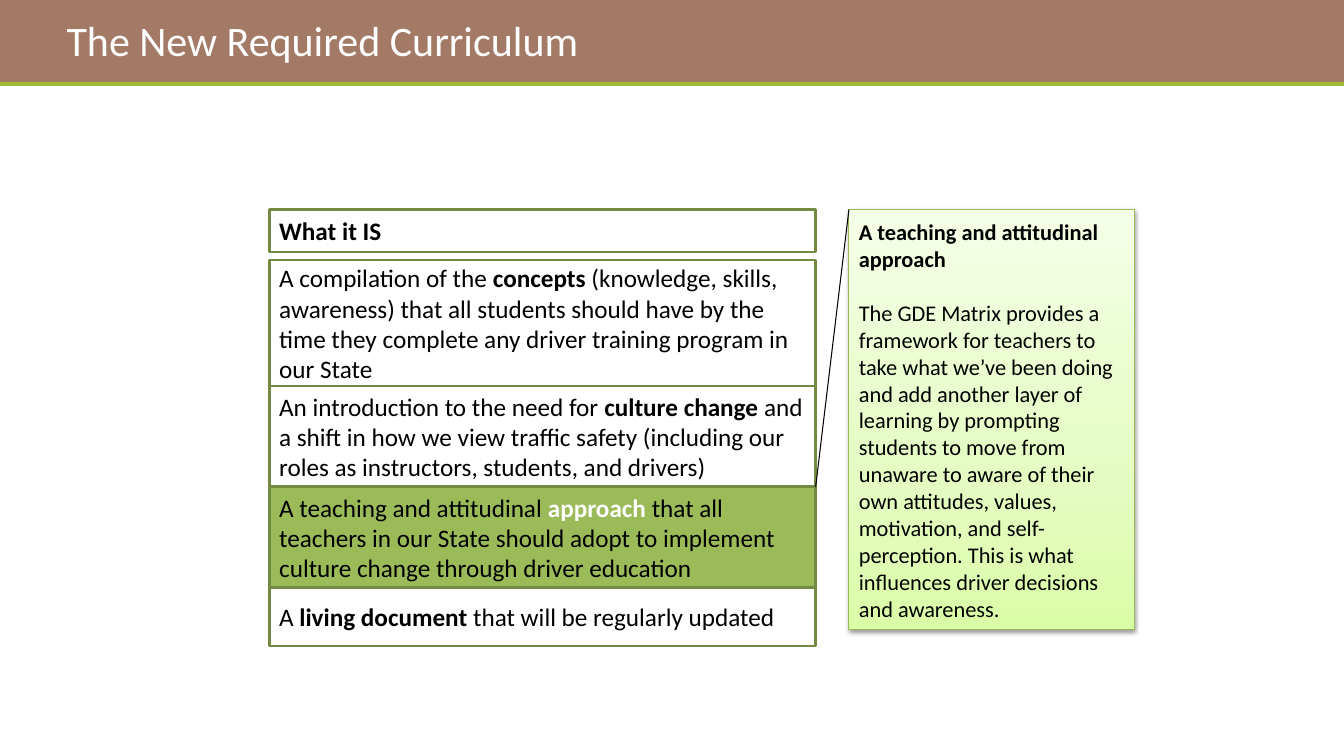
from lxml.etree import SubElement
from pptx import Presentation
from pptx.dml.color import RGBColor
from pptx.enum.shapes import MSO_CONNECTOR, MSO_SHAPE
from pptx.enum.text import MSO_ANCHOR, PP_ALIGN
from pptx.oxml.ns import qn
from pptx.util import Inches, Pt

BLACK = RGBColor(0x00, 0x00, 0x00)
WHITE = RGBColor(0xFF, 0xFF, 0xFF)
BROWN = RGBColor(0xA3, 0x7A, 0x66)
LIME = RGBColor(0xA0, 0xBA, 0x35)
OLIVE = RGBColor(0x73, 0x8A, 0x42)
GREEN = RGBColor(0x9B, 0xBB, 0x59)
CALLOUT_EDGE = RGBColor(0x98, 0xB9, 0x55)
CALLOUT_STOPS = [
    (0, RGBColor(0xDA, 0xFD, 0xA7)),
    (35, RGBColor(0xE4, 0xFC, 0xC2)),
    (100, RGBColor(0xF5, 0xFF, 0xE7)),
]


class SlideBuilder:
    font = "Calibri"

    def __init__(self, slide):
        self.slide = slide

    def add_runs(self, paragraph, runs, size):
        paragraph.alignment = PP_ALIGN.LEFT
        for text, bold, color in runs:
            run = paragraph.add_run()
            run.text = text
            run.font.name = self.font
            run.font.size = Pt(size)
            run.font.bold = bold
            run.font.color.rgb = color

    def title(self, text, left, top, width, height):
        title = self.slide.shapes.title
        title.left, title.top = Inches(left), Inches(top)
        title.width, title.height = Inches(width), Inches(height)
        title.text_frame.vertical_anchor = MSO_ANCHOR.MIDDLE
        self.add_runs(title.text_frame.paragraphs[0], [(text, False, WHITE)], 30)
        self.slide.shapes._spTree.append(title._element)

    def box(self, left, top, width, height, fill=None, edge=None, weight=2):
        box = self.slide.shapes.add_shape(
            MSO_SHAPE.RECTANGLE, Inches(left), Inches(top), Inches(width), Inches(height))
        box.shadow.inherit = False
        if fill is None:
            box.fill.background()
        else:
            box.fill.solid()
            box.fill.fore_color.rgb = fill
        if edge is None:
            box.line.fill.background()
        else:
            box.line.color.rgb = edge
            box.line.width = Pt(weight)
        return box

    def text(self, box, paragraphs, size, gap=0):
        frame = box.text_frame
        frame.word_wrap = True
        frame.vertical_anchor = MSO_ANCHOR.MIDDLE
        for index, runs in enumerate(paragraphs):
            paragraph = frame.add_paragraph() if index else frame.paragraphs[0]
            if index:
                paragraph.space_before = Pt(gap)
            self.add_runs(paragraph, runs, size)

    def gradient(self, box, stops, angle):
        box.fill.gradient()
        box.fill.gradient_angle = angle
        stop_list = box._element.spPr.find(qn("a:gradFill")).find(qn("a:gsLst"))
        for stop in list(stop_list):
            stop_list.remove(stop)
        for position, color in stops:
            stop = SubElement(stop_list, qn("a:gs"), pos=str(position * 1000))
            SubElement(stop, qn("a:srgbClr"), val=str(color))

    def drop_shadow(self, box):
        effects = box._element.spPr.find(qn("a:effectLst"))
        shadow = SubElement(effects, qn("a:outerShdw"), blurRad=str(Pt(3.1)),
                            dist=str(Pt(1.6)), dir="5400000", rotWithShape="0")
        color = SubElement(shadow, qn("a:srgbClr"), val=str(BLACK))
        SubElement(color, qn("a:alpha"), val="38000")

    def line(self, start, end, color, weight):
        line = self.slide.shapes.add_connector(
            MSO_CONNECTOR.STRAIGHT, *(Inches(value) for value in (*start, *end)))
        line.line.color.rgb = color
        line.line.width = Pt(weight)
        SubElement(line._element.spPr, qn("a:effectLst"))


def main():
    deck = Presentation()
    deck.slide_width, deck.slide_height = Inches(13.33), Inches(7.5)
    builder = SlideBuilder(deck.slides.add_slide(deck.slide_layouts[5]))

    builder.box(0, 0, 13.33, 0.83, BROWN)
    builder.line((0, 0.83), (13.33, 0.83), LIME, 3)
    builder.title("The New Required Curriculum", 0.56, 0.17, 9.11, 0.45)

    list_left, list_width, list_top = 2.67, 5.42, 2.08
    heading = builder.box(list_left, list_top, list_width, 0.42, edge=OLIVE)
    builder.text(heading, [[("What it IS", True, BLACK)]], 18)

    statements = [
        (1.25, None, BLACK, "A compilation of the ", "concepts ",
         "(knowledge, skills, awareness) that all students should have by the time "
         "they complete any driver training program in our State"),
        (1, None, BLACK, "An introduction to the need for ", "culture change ",
         "and a shift in how we view traffic safety (including our roles as "
         "instructors, students, and drivers)"),
        (1, GREEN, WHITE, "A teaching and attitudinal ", "approach ",
         "that all teachers in our State should adopt to implement culture change "
         "through driver education"),
        (0.58, None, BLACK, "A ", "living document ", "that will be regularly updated"),
    ]
    top = 2.58
    for height, fill, key_color, opening, key, ending in statements:
        statement = builder.box(list_left, top, list_width, height, fill, OLIVE)
        builder.text(statement, [[(opening, False, BLACK), (key, True, key_color),
                                  (ending, False, BLACK)]], 18)
        top += height

    callout_left = 8.42
    callout = builder.box(callout_left, list_top, 2.83, 4.17, edge=CALLOUT_EDGE, weight=0.75)
    builder.gradient(callout, CALLOUT_STOPS, 90)
    builder.drop_shadow(callout)
    builder.text(callout, [
        [("A teaching and attitudinal approach", True, BLACK)],
        [("The GDE Matrix provides a framework for teachers to take what we’ve been "
          "doing and add another layer of learning by prompting students to move from "
          "unaware to aware of their own attitudes, values, motivation, and "
          "self-perception. This is what influences driver decisions and awareness.",
          False, BLACK)],
    ], 16, gap=19.5)
    builder.line((callout_left, list_top), (list_left + list_width, 4.83), BLACK, 0.75)

    deck.save("out.pptx")


if __name__ == "__main__":
    main()
